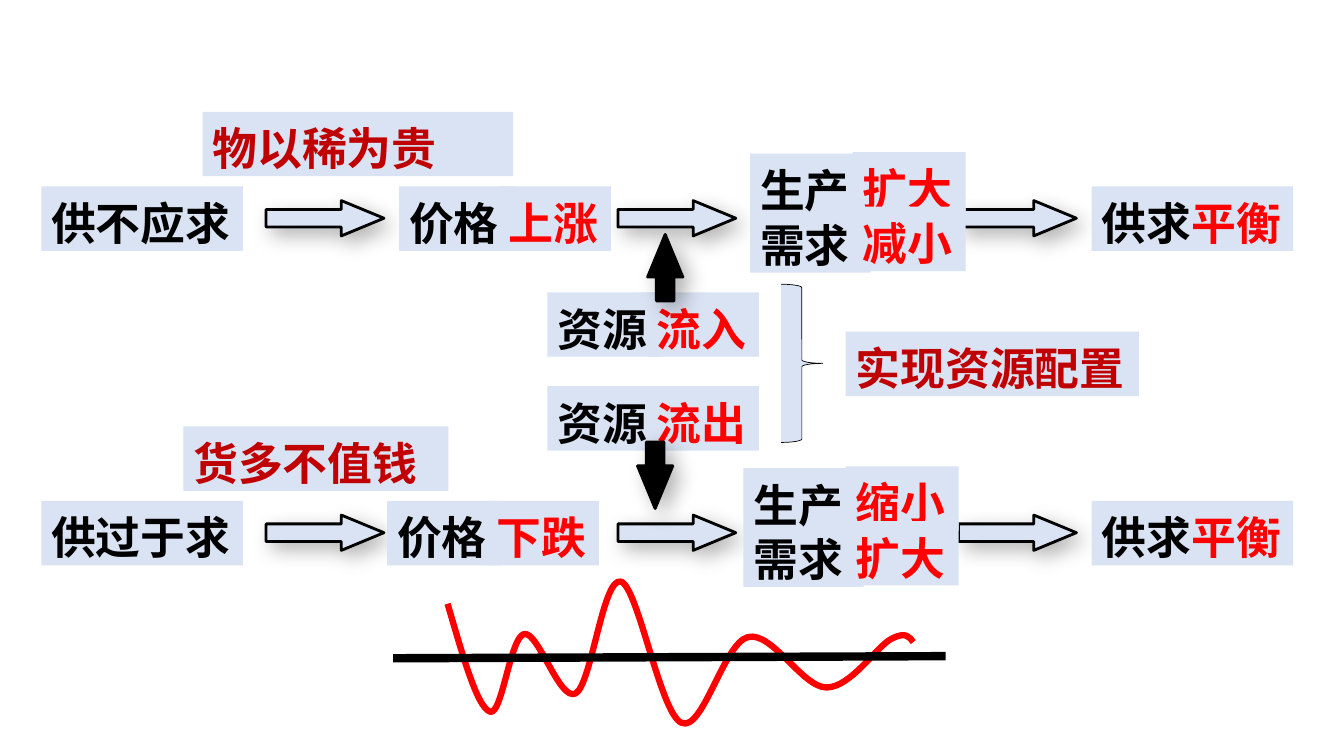
"""Build a slide on how supply, demand and price allocate resources."""
from lxml.etree import SubElement
from pptx import Presentation
from pptx.dml.color import RGBColor
from pptx.enum.shapes import MSO_CONNECTOR, MSO_SHAPE
from pptx.enum.text import MSO_ANCHOR, PP_ALIGN
from pptx.oxml.ns import qn
from pptx.util import Pt

COLORS = {"pale": "DAE3F3", "black": "000000", "red": "FF0000", "crimson": "C00000"}
SANS, HEADLINE = "Noto Sans CJK SC", "Noto Sans CJK JP"
LINE_HEIGHT, BOX_HEIGHT = 39, 46

deck = Presentation()
deck.slide_width, deck.slide_height = Pt(960), Pt(540)
page = deck.slides.add_slide(deck.slide_layouts[6])


def add_label(left, top, width, lines, font=SANS):
    """Add a pale box; each line is a list of (text, colour) spans."""
    height = BOX_HEIGHT + LINE_HEIGHT * (len(lines) - 1)
    box = page.shapes.add_shape(MSO_SHAPE.RECTANGLE, Pt(left), Pt(top), Pt(width), Pt(height))
    box.shadow.inherit = False
    box.fill.solid()
    box.fill.fore_color.rgb = RGBColor.from_string(COLORS["pale"])
    box.line.fill.background()
    frame = box.text_frame
    frame_format = {"word_wrap": True, "vertical_anchor": MSO_ANCHOR.TOP,
                    "margin_top": Pt(6), "margin_bottom": Pt(1)}
    for name, value in frame_format.items():
        setattr(frame, name, value)
    for index, line in enumerate(lines):
        para = frame.add_paragraph() if index else frame.paragraphs[0]
        para.alignment = PP_ALIGN.LEFT
        para.line_spacing = Pt(LINE_HEIGHT)
        for text, color in line:
            span = para.add_run()
            span.text = text
            for name, value in {"size": Pt(32), "bold": True, "name": font}.items():
                setattr(span.font, name, value)
            span.font.color.rgb = RGBColor.from_string(COLORS[color])
            SubElement(span.font._element, qn("a:ea"), typeface=font)


def add_arrow(left, top, width, color, rotation=0):
    """Add an outlined block arrow with a soft shadow."""
    arrow = page.shapes.add_shape(MSO_SHAPE.RIGHT_ARROW, Pt(left), Pt(top), Pt(width), Pt(25.2))
    arrow.adjustments[1] = 1.207
    arrow.rotation = rotation
    arrow.fill.solid()
    arrow.fill.fore_color.rgb = RGBColor.from_string(COLORS[color])
    arrow.line.color.rgb = RGBColor.from_string(COLORS["black"])
    arrow.line.width = Pt(2)
    arrow.shadow.inherit = False
    effects = arrow._element.spPr.find(qn("a:effectLst"))
    shadow = SubElement(effects, qn("a:outerShdw"), blurRad=str(Pt(15)), dist=str(Pt(7)),
                        dir="2700000", algn="tl", rotWithShape="0")
    shade = SubElement(shadow, qn("a:srgbClr"), val=COLORS["black"])
    SubElement(shade, qn("a:alpha"), val="30000")


rows = [
    (133.2, "供不应求", 285.1, "上涨", 535.9, 609.1, ("扩大", "减小")),
    (357.8, "供过于求", 276.5, "下跌", 531, 604.1, ("缩小", "扩大")),
]
for top, market, price_left, price_move, output_left, change_left, changes in rows:
    for arrow_left in (190.1, 441.4, 684.7):
        add_arrow(arrow_left, top + 10.1, 84.2, "pale")
    add_label(29.5, top, 144, [[(market, "black")]])
    add_label(price_left, top, 82, [[("价格", "black")]])
    add_label(price_left + 71.3, top, 80, [[(price_move, "red")]])
    add_label(output_left, top - 23.5, 86, [[("生产", "black")], [("需求", "black")]])
    for index, change in enumerate(changes):
        add_label(change_left, top - 24.6 + LINE_HEIGHT * index, 80.6, [[(change, "red")]])
    add_label(779.8, top, 144, [[("供求", "black"), ("平衡", "red")]])

for top, flow in ((208.8, "流入"), (275.8, "流出")):
    add_label(391, top, 82, [[("资源", "black")]])
    add_label(462.2, top, 80, [[(flow, "red")]])

headlines = [
    (144.7, 79.9, 221.8, "物以稀为贵"),
    (131, 304.6, 189.4, "货多不值钱"),
    (604.1, 236.9, 209.5, "实现资源配置"),
]
for left, top, width, text in headlines:
    add_label(left, top, width, [[(text, "crimson")]], HEADLINE)

brace = page.shapes.add_shape(MSO_SHAPE.LEFT_BRACE, Pt(558), Pt(203), Pt(29.5), Pt(113))
brace.rotation = 180
brace.shadow.inherit = False
brace.fill.solid()
brace.fill.fore_color.rgb = RGBColor.from_string(COLORS["pale"])
brace.line.color.rgb = RGBColor.from_string(COLORS["black"])
brace.line.width = Pt(0.5)

add_arrow(451.4, 178.6, 47.5, "black", 270)
add_arrow(444.2, 326.9, 47.5, "black", 90)

wave_points = [
    (4.44, 5.99), (4.59, 6.5), (4.73, 7.01), (4.86, 7.06), (4.98, 7.11), (5.06, 6.32),
    (5.2, 6.29), (5.34, 6.26), (5.55, 6.96), (5.71, 6.88), (5.87, 6.79), (5.98, 5.72),
    (6.16, 5.77), (6.33, 5.82), (6.55, 7.08), (6.76, 7.17), (6.97, 7.27), (7.18, 6.38),
    (7.42, 6.32), (7.66, 6.26), (7.96, 6.82), (8.2, 6.82), (8.44, 6.82), (8.7, 6.41),
    (8.84, 6.34), (8.99, 6.26), (9.02, 6.32), (9.06, 6.37),
]
wave_points = [(Pt(x * 72), Pt(y * 72)) for x, y in wave_points]
builder = page.shapes.build_freeform(*wave_points[0])
builder.add_line_segments(wave_points[1:], close=False)
wave = builder.convert_to_shape()
wave.shadow.inherit = False
wave.fill.background()
wave.line.color.rgb = RGBColor.from_string(COLORS["red"])
wave.line.width = Pt(4.5)
segments = list(wave._element.iter(qn("a:lnTo")))
for start in range(0, len(segments), 3):
    outline = segments[start].getparent()
    curve = SubElement(outline, qn("a:cubicBezTo"))
    for segment in segments[start:start + 3]:
        curve.append(segment[0])
        outline.remove(segment)

axis = page.shapes.add_connector(MSO_CONNECTOR.STRAIGHT, Pt(280.8), Pt(470.2), Pt(675.4), Pt(468.7))
axis.line.color.rgb = RGBColor.from_string(COLORS["black"])
axis.line.width = Pt(6)
SubElement(axis._element.spPr, qn("a:effectLst"))

deck.save("out.pptx")
